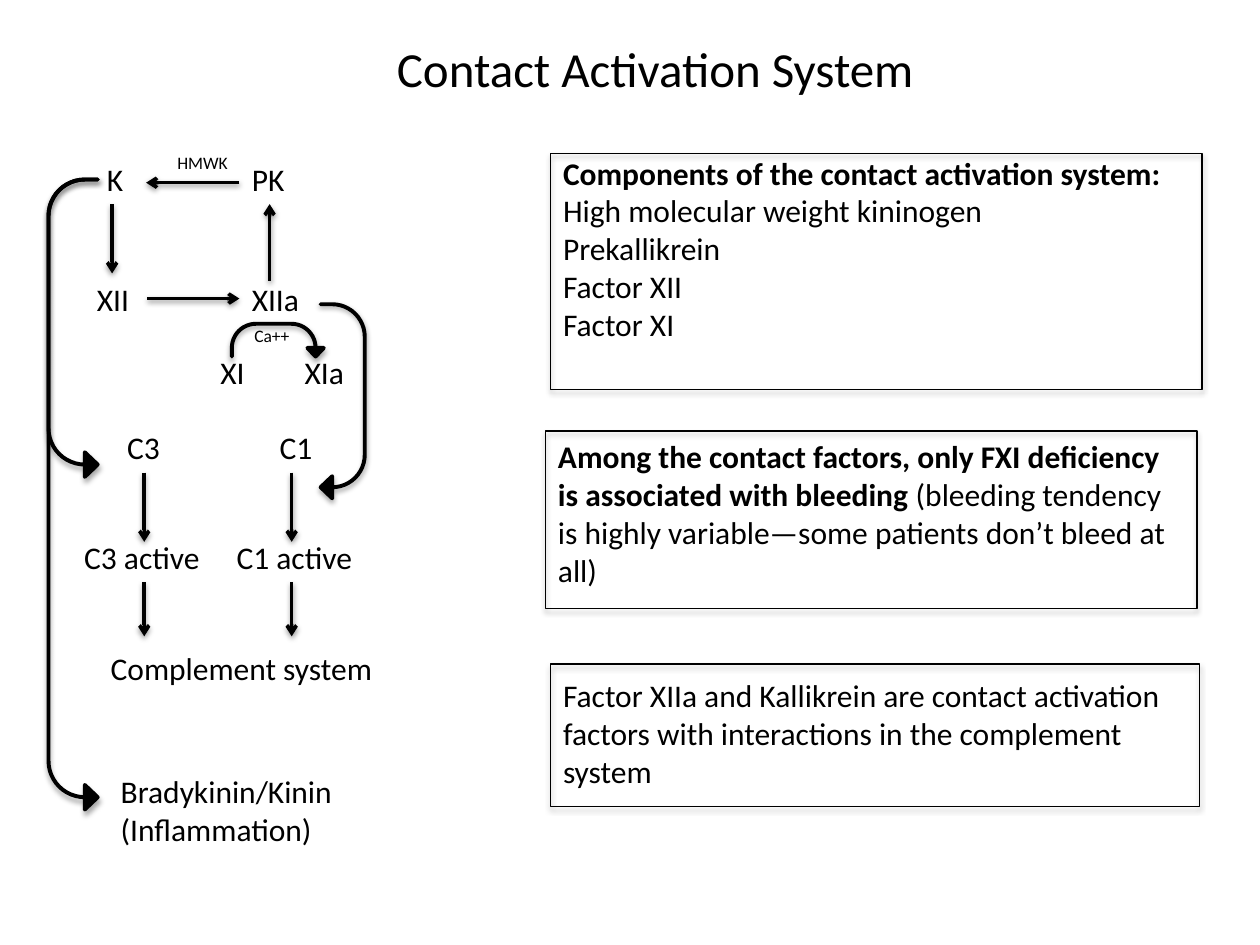
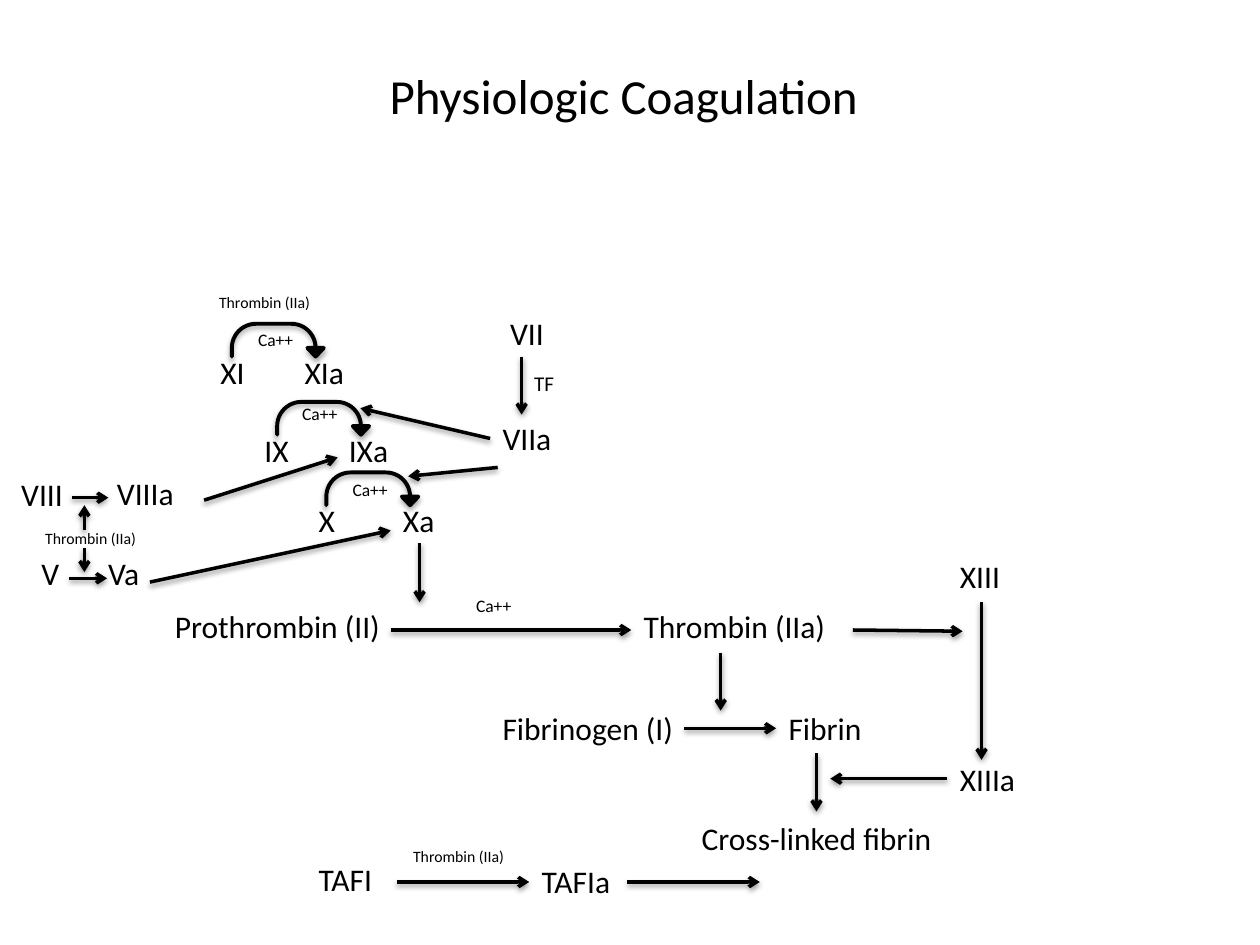
"""Builds two slides on contact activation and physiologic coagulation."""
from lxml.etree import SubElement
from pptx import Presentation
from pptx.dml.color import RGBColor
from pptx.enum.shapes import MSO_CONNECTOR as CONNECTOR, MSO_SHAPE as SHAPE
from pptx.enum.text import MSO_AUTO_SIZE as AUTO_SIZE, PP_ALIGN as ALIGN
from pptx.oxml.ns import qn
from pptx.util import Inches, Pt

COLORS = {"ink": "000000", "paper": "FFFFFF"}
FONT = "Calibri"
BODY, TITLE, COFACTOR, ENZYME = 18, 28, 10, 9
TURN = (0, 0.25, 0.262, 0.738, 1)


def color(name):
    """Return a palette colour."""
    return RGBColor.from_string(COLORS[name])


def style(paragraph, size):
    """Apply the shared font to a paragraph."""
    paragraph.font.name = FONT
    paragraph.font.size = Pt(size)
    paragraph.font.color.rgb = color("ink")


def add_shadow(element, opacity, distance):
    """Drop a soft shadow straight below a shape or connector."""
    effects = SubElement(element.spPr, qn("a:effectLst"))
    shadow = SubElement(effects, qn("a:outerShdw"), blurRad=str(Pt(3.1)),
                        dist=str(Pt(distance)), dir="5400000", rotWithShape="0")
    shade = SubElement(shadow, qn("a:srgbClr"), val=COLORS["ink"])
    SubElement(shade, qn("a:alpha"), val=str(opacity * 1000))


def add_slide(deck, heading, left, top, width, height):
    """Add a slide with its heading in the title placeholder."""
    slide = deck.slides.add_slide(deck.slide_layouts[5])
    slide.background.fill.solid()
    slide.background.fill.fore_color.rgb = color("paper")
    title = slide.shapes.title
    title.left, title.top = Inches(left), Inches(top)
    title.width, title.height = Inches(width), Inches(height)
    title.text_frame.text = heading
    paragraph = title.text_frame.paragraphs[0]
    paragraph.alignment = ALIGN.CENTER
    style(paragraph, TITLE)
    return slide


def add_text(slide, paragraphs, left, top, width, height=0.4, size=BODY):
    """Add wrapped text, given as paragraphs of (words, bold) runs."""
    box = slide.shapes.add_textbox(
        Inches(left), Inches(top), Inches(width), Inches(height))
    frame = box.text_frame
    frame.word_wrap = True
    frame.auto_size = AUTO_SIZE.SHAPE_TO_FIT_TEXT
    for index, runs in enumerate(paragraphs):
        paragraph = frame.add_paragraph() if index else frame.paragraphs[0]
        style(paragraph, size)
        for words, bold in runs:
            run = paragraph.add_run()
            run.text = words
            run.font.bold = bold


def add_label(slide, words, left, top, width, height=0.4, size=BODY):
    """Add a label with a single plain run."""
    add_text(slide, [[(words, False)]], left, top, width, height, size)


def add_arrow(slide, x1, y1, x2, y2):
    """Add a straight reaction arrow."""
    arrow = slide.shapes.add_connector(
        CONNECTOR.STRAIGHT, Inches(x1), Inches(y1), Inches(x2), Inches(y2))
    arrow.line.color.rgb = color("ink")
    arrow.line.width = Pt(2)
    SubElement(arrow.line._get_or_add_ln(), qn("a:tailEnd"), type="arrow")
    add_shadow(arrow._element, 38, 1.6)


def add_outline(slide, kind, left, top, width, height, weight):
    """Add a black-lined preset shape."""
    shape = slide.shapes.add_shape(
        kind, Inches(left), Inches(top), Inches(width), Inches(height))
    shape.line.color.rgb = color("ink")
    shape.line.width = Pt(weight)
    return shape


def add_turn(slide, left, top, width, height, rotation=0, flipped=False):
    """Add a curved arrow that turns back on itself."""
    turn = add_outline(slide, SHAPE.U_TURN_ARROW, left, top, width, height, 2.25)
    turn.fill.solid()
    turn.fill.fore_color.rgb = color("ink")
    for index, value in enumerate(TURN):
        turn.adjustments[index] = value
    turn.rotation = rotation
    if flipped:
        turn._element.spPr.xfrm.set("flipV", "1")
    add_shadow(turn._element, 35, 1.8)


def add_panel(slide, paragraphs, text_top, left, top, width, height):
    """Add a framed comment."""
    add_text(slide, paragraphs, left, text_top, 5.15, height)
    frame = add_outline(slide, SHAPE.RECTANGLE, left, top, width, height, 0.75)
    frame.fill.background()
    add_shadow(frame._element, 35, 1.8)


def add_activation(slide, factor, left, top, turn_left, calcium_left, calcium_top):
    """Show a factor turning into its active form with calcium."""
    add_label(slide, factor, left, top, 0.45)
    add_label(slide, factor + "a", left + 0.67, top, 0.64)
    add_turn(slide, turn_left, top - 0.18, 0.73, 0.26)
    add_label(slide, "Ca++", calcium_left, calcium_top, 0.7, 0.27, COFACTOR)


def build_contact_slide(deck):
    """Build the contact activation slide."""
    slide = add_slide(deck, "Contact Activation System", 3, 0.17, 4.4, 0.74)
    for words, *place in (
        ("K", 0.75, 1.22, 0.4),
        ("PK", 1.9, 1.22, 0.76),
        ("HMWK", 1.31, 1.16, 0.64, 0.27, COFACTOR),
        ("XII", 0.67, 2.17, 0.66),
        ("XIIa", 1.9, 2.17, 0.76),
        ("Complement system", 0.78, 5.1, 2.69),
        ("Bradykinin/Kinin (Inflammation)", 0.86, 6.08, 2.23, 0.71),
    ):
        add_label(slide, words, *place)
    for ends in (
        (1.9, 1.45, 1.16, 1.45),
        (0.89, 1.62, 0.89, 2.17),
        (1.17, 2.37, 1.9, 2.37),
        (2.14, 2.23, 2.14, 1.62),
    ):
        add_arrow(slide, *ends)
    add_activation(slide, "XI", 1.65, 2.75, 1.84, 1.92, 2.53)

    for component, left, arrow_x in (("C3", 0.91, 1.145), ("C1", 2.12, 2.315)):
        add_label(slide, component, left, 3.35, 0.55)
        add_label(slide, component + " active", left - 0.34, 4.22, 1.27)
        add_arrow(slide, arrow_x, 3.75, arrow_x, 4.3)
        add_arrow(slide, arrow_x, 4.62, arrow_x, 5.05)

    add_turn(slide, -1.92, 3.73, 5, 0.39, 90, True)
    add_turn(slide, -0.6, 2.41, 2.36, 0.39, 90, True)
    add_turn(slide, 1.95, 3.01, 1.54, 0.35, 90)

    components = ("High molecular weight kininogen", "Prekallikrein",
                  "Factor XII", "Factor XI")
    add_panel(slide, [[("Components of the contact activation system:", True)],
                      *([(name, False)] for name in components)],
              1.17, 4.37, 1.22, 5.17, 1.87)
    add_panel(slide, [[
        ("Among the contact factors, only FXI deficiency is associated "
         "with bleeding ", True),
        ("(bleeding tendency is highly variable—some patients don’t "
         "bleed at all)", False)]], 3.42, 4.33, 3.42, 5.17, 1.41)
    add_panel(slide, [[
        ("Factor XIIa and Kallikrein are contact activation factors with "
         "interactions in the complement system", False)]],
        5.32, 4.37, 5.27, 5.15, 1.13)


def build_coagulation_slide(deck):
    """Build the physiologic coagulation slide."""
    slide = add_slide(deck, "Physiologic Coagulation", 2.83, 0.42, 4.24, 0.66)
    for activation in (
        ("XI", 1.65, 2.75, 1.84, 1.95, 2.56),
        ("IX", 2, 3.37, 2.2, 2.3, 3.15),
        ("X", 2.43, 3.93, 2.59, 2.7, 3.75),
    ):
        add_activation(slide, *activation)
    for words, left, top, width in (
        ("VIII", 0.07, 3.72, 0.66),
        ("VIIIa", 0.83, 3.71, 0.86),
        ("V", 0.23, 4.35, 0.4),
        ("Va", 0.76, 4.35, 0.72),
        ("VII", 3.95, 2.44, 0.6),
        ("VIIa", 3.89, 3.28, 0.74),
        ("Prothrombin (II)", 1.29, 4.77, 1.93),
        ("Thrombin (IIa)", 5.01, 4.77, 1.93),
        ("Fibrinogen (I)", 3.89, 5.58, 1.71),
        ("Fibrin", 6.16, 5.58, 1.09),
        ("XIII", 7.52, 4.37, 0.73),
        ("XIIIa", 7.52, 5.98, 0.77),
        ("Cross-linked fibrin", 5.47, 6.45, 2.95),
        ("TAFI", 2.43, 6.78, 0.76),
        ("TAFIa", 4.2, 6.79, 0.95),
    ):
        add_label(slide, words, left, top, width)
    add_label(slide, "TF", 4.14, 2.89, 0.52, 0.3, 12)
    add_label(slide, "Ca++", 3.68, 4.67, 0.65, 0.27, COFACTOR)
    for left, top in ((0.26, 4.15), (1.64, 2.27), (3.18, 6.67)):
        add_label(slide, "Thrombin (IIa)", left, top, 1.19, 0.25, ENZYME)
    for ends in (
        (0.57, 3.95, 0.86, 3.95),
        (1.62, 3.97, 2.68, 3.63),
        (0.55, 4.59, 0.85, 4.59),
        (1.19, 4.62, 3.1, 4.21),
        (0.67, 4.21, 0.67, 4.01),
        (0.67, 4.35, 0.67, 4.54),
        (4.14, 2.83, 4.14, 3.29),
        (3.89, 3.48, 2.86, 3.24),
        (3.95, 3.71, 3.24, 3.78),
        (3.33, 4.31, 3.33, 4.78),
        (3.1, 5, 5.01, 5),
        (5.72, 5.18, 5.72, 5.64),
        (5.43, 5.78, 6.16, 5.78),
        (6.77, 5, 7.64, 5.01),
        (7.79, 4.78, 7.79, 6.03),
        (7.52, 6.18, 6.59, 6.18),
        (6.48, 5.98, 6.48, 6.44),
        (3.15, 7, 4.2, 7),
        (4.98, 7, 6.03, 7),
    ):
        add_arrow(slide, *ends)


def main():
    """Build and save the deck."""
    deck = Presentation()
    deck.slide_width, deck.slide_height = Inches(10), Inches(7.5)
    build_contact_slide(deck)
    build_coagulation_slide(deck)
    deck.save("out.pptx")


if __name__ == "__main__":
    main()
